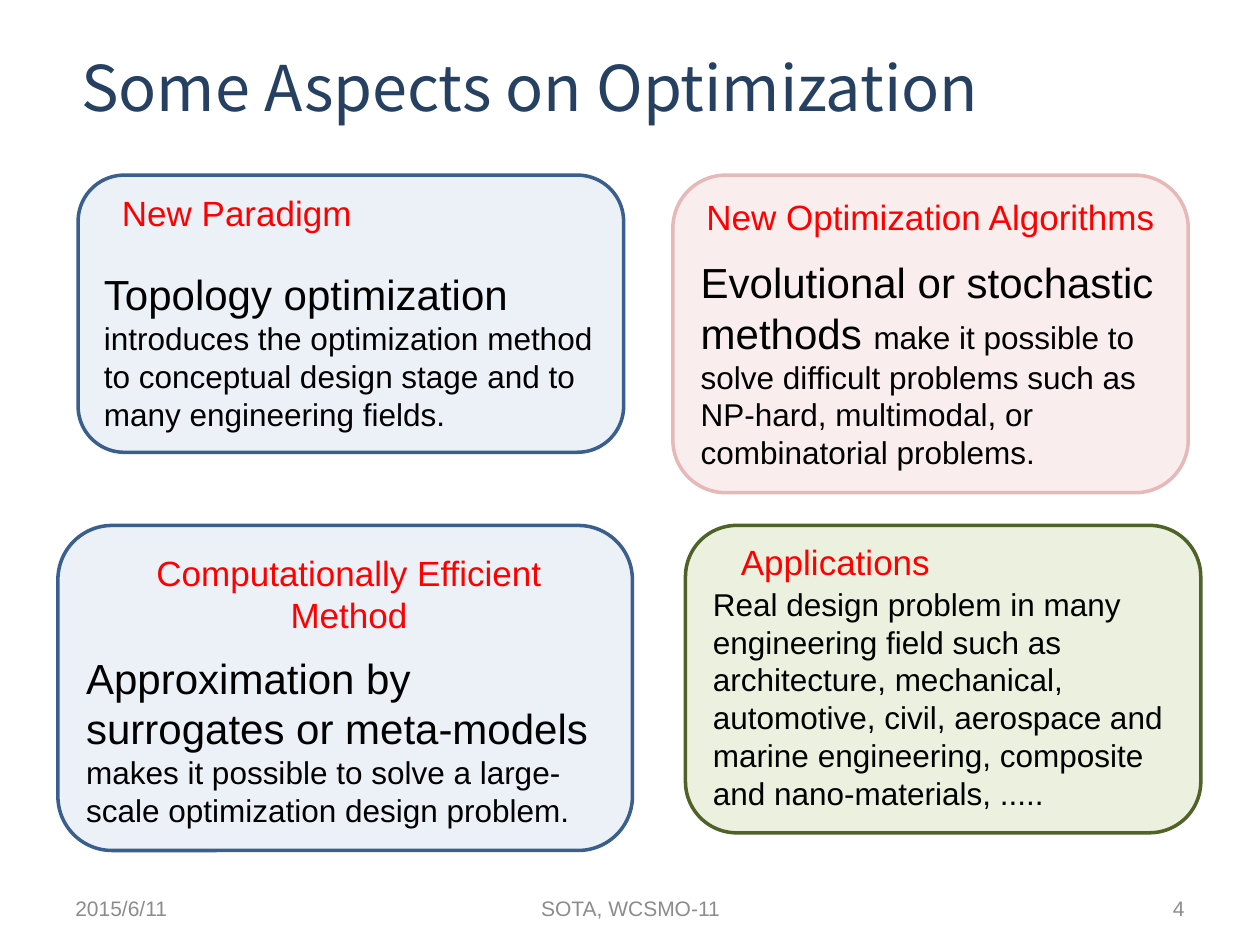
from dataclasses import dataclass

from pptx import Presentation
from pptx.dml.color import RGBColor
from pptx.enum.shapes import MSO_SHAPE as Preset
from pptx.enum.text import MSO_ANCHOR as Anchor, PP_ALIGN as Align
from pptx.util import Inches, Pt


@dataclass(frozen=True)
class Theme:
    title_font: str = "Noto Sans CJK JP"
    body_font: str = "Arial"
    title_color: str = "254061"
    heading_color: str = "FF0000"
    body_color: str = "000000"
    footer_color: str = "8C8C8C"
    blue: tuple = ("ECF1F8", "3A5F8C")
    pink: tuple = ("F9EEED", "E6B9B8")
    green: tuple = ("EBF1DE", "4F6228")
    title_size: int = 36
    lead_size: int = 24
    heading_size: int = 20
    body_size: int = 18
    footer_size: int = 12
    outline: int = 2


THEME = Theme()
TITLE = "Some Aspects on Optimization"
CARDS = [
    dict(box=(0.62, 1.39, 4.33, 2.2), colors=THEME.blue,
         heading="New Paradigm", heading_box=(0.86, 1.47, 2.04, 0.44), wrap=False,
         lead="Topology optimization ",
         body="introduces the optimization method to conceptual design stage "
              "and to many engineering fields."),
    dict(box=(0.46, 4.17, 4.56, 2.58), colors=THEME.blue,
         heading="Computationally Efficient Method",
         heading_box=(0.66, 4.33, 4.22, 0.44), wrap=True,
         lead="Approximation by surrogates or meta-models ",
         body="makes it possible to solve a large-scale optimization design problem."),
    dict(box=(5.34, 1.39, 4.09, 2.52), colors=THEME.pink,
         heading="New Optimization Algorithms",
         heading_box=(5.5, 1.5, 3.77, 0.44), wrap=False,
         lead="Evolutional or stochastic methods ",
         body="make it possible to solve difficult problems such as NP-hard, "
              "multimodal, or combinatorial problems."),
    dict(box=(5.44, 4.17, 4.09, 2.44), colors=THEME.green,
         heading="Applications", heading_box=(5.77, 4.24, 1.72, 0.44), wrap=False,
         lead="",
         body="Real design problem in many engineering field such as architecture, "
              "mechanical, automotive, civil, aerospace and marine engineering, "
              "composite and nano-materials, ....."),
]
FOOTERS = [
    ("2015/6/11", 0.5, 2.33, Align.LEFT),
    ("SOTA, WCSMO-11", 3.42, 3.17, Align.CENTER),
    ("4", 8.62, 0.88, Align.RIGHT),
]


def write_text(shape, *runs, color, font=THEME.body_font, align=Align.LEFT,
               anchor=Anchor.MIDDLE, wrap=True):
    frame = shape.text_frame
    frame.word_wrap = wrap
    frame.vertical_anchor = anchor
    paragraph = frame.paragraphs[0]
    paragraph.alignment = align
    for text, size in runs:
        run = paragraph.add_run()
        run.text = text
        run.font.name = font
        run.font.size = Pt(size)
        run.font.color.rgb = RGBColor.from_string(color)


def add_label(slide, box, text, size, **text_format):
    label = slide.shapes.add_textbox(*map(Inches, box))
    write_text(label, (text, size), **text_format)


def add_card(slide, card):
    shape = slide.shapes.add_shape(Preset.ROUNDED_RECTANGLE, *map(Inches, card["box"]))
    fill, line = map(RGBColor.from_string, card["colors"])
    shape.shadow.inherit = False
    shape.fill.solid()
    shape.fill.fore_color.rgb = fill
    shape.line.color.rgb = line
    shape.line.width = Pt(THEME.outline)
    runs = [(card["lead"], THEME.lead_size), (card["body"], THEME.body_size)]
    write_text(shape, *(run for run in runs if run[0]),
               color=THEME.body_color, anchor=Anchor.BOTTOM)
    add_label(slide, card["heading_box"], card["heading"], THEME.heading_size,
              color=THEME.heading_color, align=Align.CENTER,
              anchor=Anchor.TOP, wrap=card["wrap"])


def main():
    presentation = Presentation()
    presentation.slide_width = Inches(10)
    presentation.slide_height = Inches(7.5)
    slide = presentation.slides.add_slide(presentation.slide_layouts[6])
    add_label(slide, (0.5, 0.3, 7.41, 0.77), TITLE, THEME.title_size,
              color=THEME.title_color, font=THEME.title_font, align=Align.CENTER)
    for card in CARDS:
        add_card(slide, card)
    for text, left, width, align in FOOTERS:
        add_label(slide, (left, 7.06, width, 0.29), text, THEME.footer_size,
                  color=THEME.footer_color, align=align)
    presentation.save("out.pptx")


if __name__ == "__main__":
    main()
